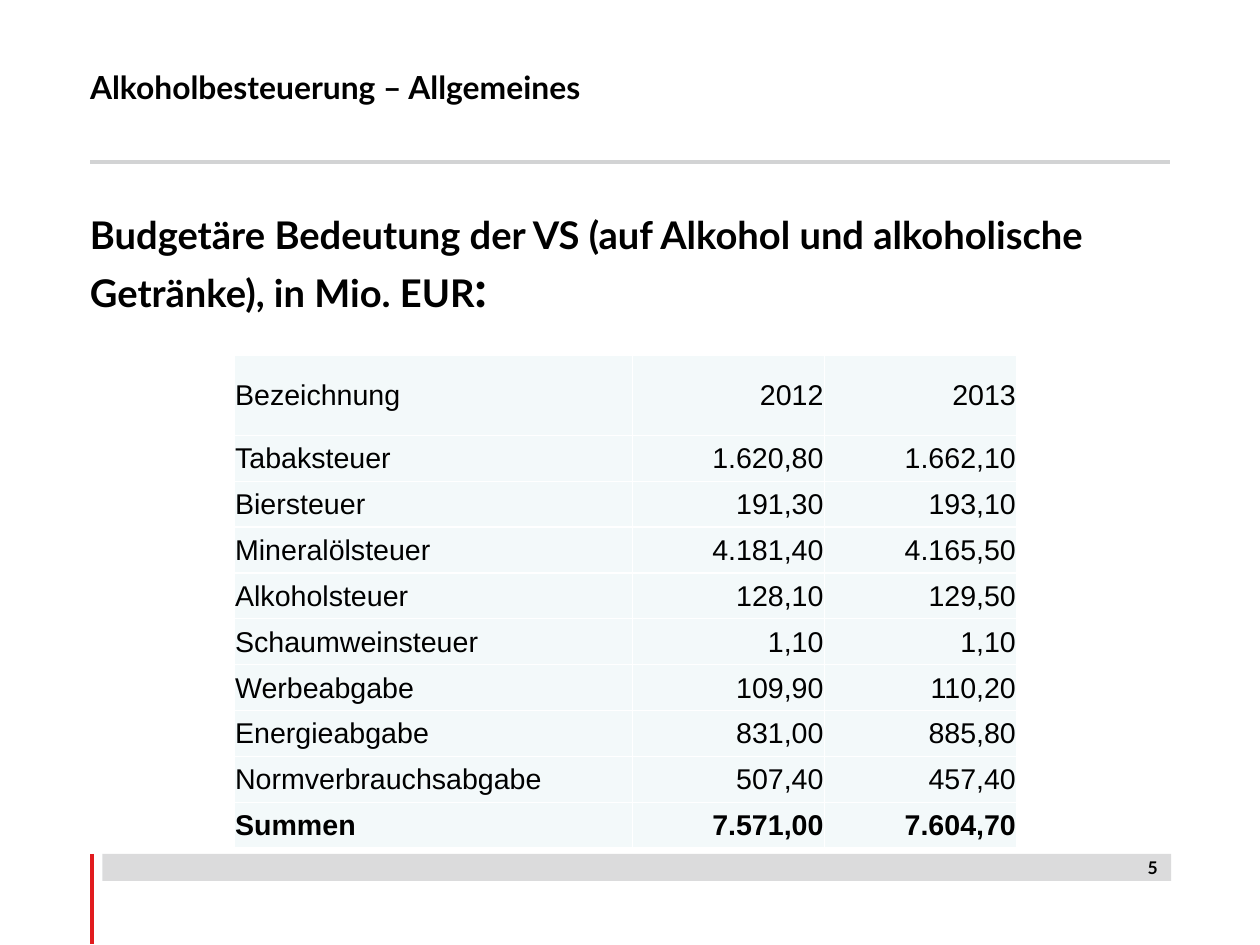
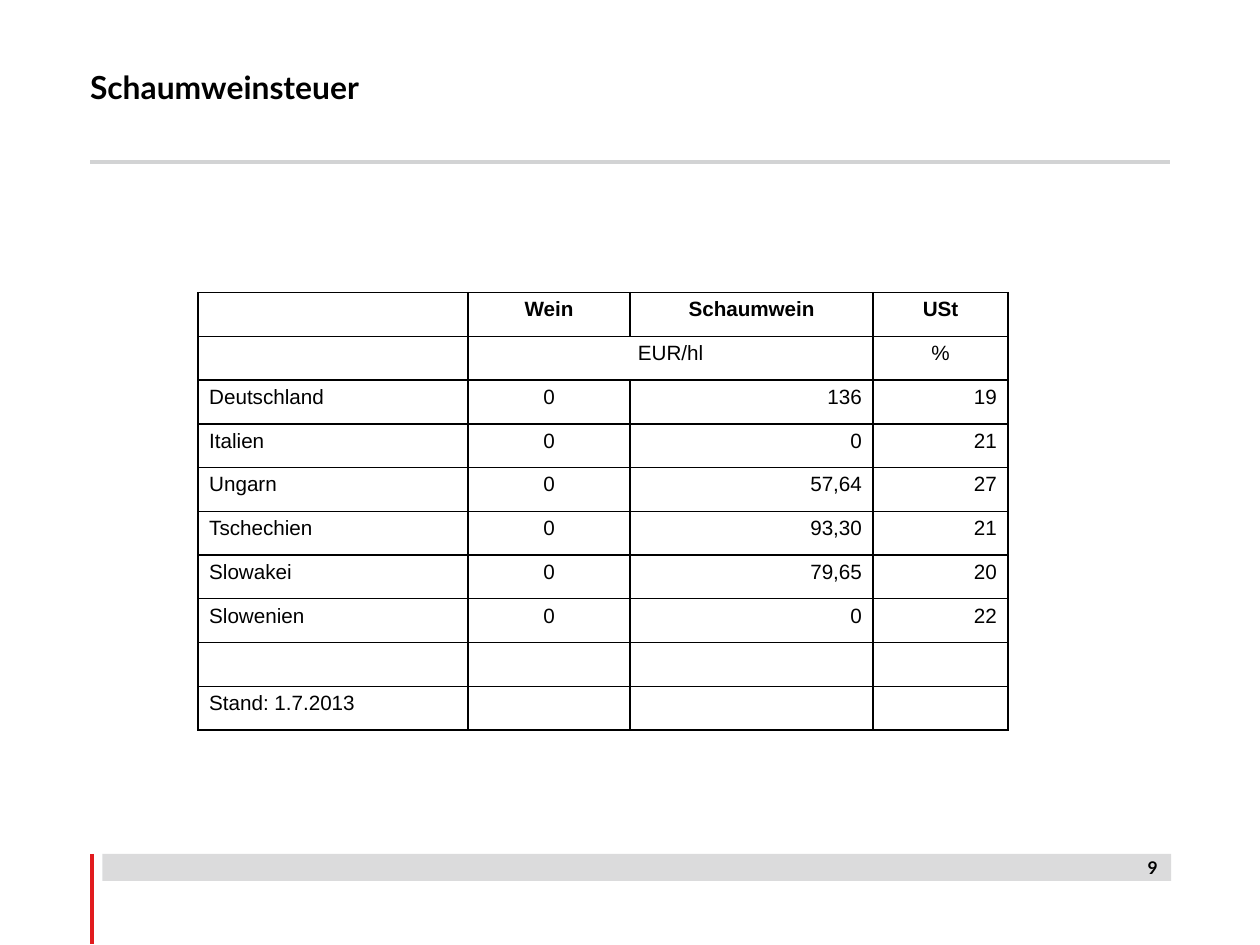
from dataclasses import dataclass

from lxml.etree import SubElement
from pptx import Presentation
from pptx.dml.color import RGBColor
from pptx.enum.shapes import MSO_CONNECTOR as Connector, MSO_SHAPE as Shape
from pptx.enum.text import MSO_ANCHOR as Anchor, MSO_AUTO_SIZE as AutoSize, PP_ALIGN as Align
from pptx.oxml import parse_xml
from pptx.oxml.ns import nsdecls, qn
from pptx.util import Pt

EMU_PER_PX = 9000
LEFT, CENTER, RIGHT = Align.LEFT, Align.CENTER, Align.RIGHT


@dataclass(frozen=True)
class Theme:
    ink: str = "000000"
    paper: str = "FFFFFF"
    grey: str = "D2D3D4"
    red: str = "E11B1E"
    pale: str = "F3F9FA"
    heading_font: str = "Lato"
    table_font: str = "Arial"
    title_size: int = 20
    lead_size: int = 24
    colon_size: int = 32
    number_size: int = 11
    rule_width: float = 2.84


@dataclass(frozen=True)
class TableStyle:
    size: int
    fill: str
    border: str
    anchor: Anchor
    margins: tuple
    aligns: tuple
    head_aligns: tuple
    head_rows: int
    bold_row: int


THEME = Theme()
BUDGET_STYLE = TableStyle(
    18, THEME.pale, THEME.paper, Anchor.MIDDLE, (1, 1, 1, 0),
    (LEFT, RIGHT, RIGHT), (LEFT, RIGHT, RIGHT), 1, 9)
RATES_STYLE = TableStyle(
    13, THEME.paper, THEME.ink, Anchor.TOP, (10, 5, 10, 5),
    (LEFT, CENTER, RIGHT, RIGHT), (LEFT, CENTER, CENTER, CENTER), 2, 0)

BUDGET_ROWS = [
    ("Bezeichnung", "2012", "2013"),
    ("Tabaksteuer", "1.620,80", "1.662,10"),
    ("Biersteuer", "191,30", "193,10"),
    ("Mineralölsteuer", "4.181,40", "4.165,50"),
    ("Alkoholsteuer", "128,10", "129,50"),
    ("Schaumweinsteuer", "1,10", "1,10"),
    ("Werbeabgabe", "109,90", "110,20"),
    ("Energieabgabe", "831,00", "885,80"),
    ("Normverbrauchsabgabe", "507,40", "457,40"),
    ("Summen", "7.571,00", "7.604,70"),
]
RATES_ROWS = [
    ("", "Wein", "Schaumwein", "USt"),
    ("", "EUR/hl", "", "%"),
    ("Deutschland", "0", "136", "19"),
    ("Italien", "0", "0", "21"),
    ("Ungarn", "0", "57,64", "27"),
    ("Tschechien", "0", "93,30", "21"),
    ("Slowakei", "0", "79,65", "20"),
    ("Slowenien", "0", "0", "22"),
    ("", "", "", ""),
    ("Stand: 1.7.2013", "", "", ""),
]


def px(*lengths):
    return [length * EMU_PER_PX for length in lengths]


def color(value):
    return RGBColor.from_string(value)


def style_paragraph(para, size, font, bold=True, align=LEFT):
    para.alignment = align
    para.font.size = Pt(size)
    para.font.name = font
    para.font.bold = bold
    para.font.color.rgb = color(THEME.ink)


def set_margins(target, margins):
    (target.margin_left, target.margin_top,
     target.margin_right, target.margin_bottom) = px(*margins)


def add_rule(page, start, end, tint):
    rule = page.shapes.add_connector(Connector.STRAIGHT, *px(*start, *end))
    rule.line.color.rgb = color(tint)
    rule.line.width = Pt(THEME.rule_width)
    SubElement(rule._element.spPr, qn("a:effectLst"))


def add_footer_bar(page):
    bar = page.shapes.add_shape(Shape.RECTANGLE, *px(91, 759, 950, 24))
    bar.shadow.inherit = False
    bar.line.fill.background()
    bar.fill.solid()
    bar.fill.fore_color.rgb = color(THEME.grey)
    tint = bar._element.spPr.find(qn("a:solidFill"))[0]
    SubElement(tint, qn("a:alpha"), val="80000")


def add_text(page, bounds, text, size, align=LEFT):
    box = page.shapes.add_textbox(*px(*bounds))
    frame = box.text_frame
    frame.word_wrap = True
    para = frame.paragraphs[0]
    para.text = text
    style_paragraph(para, size, THEME.heading_font, align=align)
    return frame


def set_title(page, text):
    title = page.shapes.title
    title.left, title.top, title.width, title.height = px(80, 44, 740, 66)
    frame = title.text_frame
    frame.text = text
    frame.auto_size = AutoSize.NONE
    frame.vertical_anchor = Anchor.MIDDLE
    set_margins(frame, (0, 0, 0, 0))
    style_paragraph(frame.paragraphs[0], THEME.title_size, THEME.heading_font)


def add_page(deck, title, number):
    page = deck.slides.add_slide(deck.slide_layouts[5])
    add_rule(page, (80, 144), (1040, 144), THEME.grey)
    add_rule(page, (82, 759), (82, 839), THEME.red)
    add_footer_bar(page)
    set_title(page, title)
    add_text(page, (968, 757, 71, 39), number, THEME.number_size, RIGHT)
    return page


def add_lead(page, text, ending):
    frame = add_text(page, (80, 188, 960, 568), text, THEME.lead_size)
    set_margins(frame, (0, 0, 0, 0))
    span = frame.paragraphs[0].add_run()
    span.text = ending
    span.font.size = Pt(THEME.colon_size)


def add_borders(cell, tint):
    properties = cell._tc.get_or_add_tcPr()
    for index, side in enumerate("LRTB"):
        properties.insert(index, parse_xml(
            f'<a:ln{side} {nsdecls("a")} w="12700"><a:solidFill>'
            f'<a:srgbClr val="{tint}"/></a:solidFill></a:ln{side}>'))


def fill_cell(cell, text, style, bold, align):
    cell.fill.solid()
    cell.fill.fore_color.rgb = color(style.fill)
    cell.vertical_anchor = style.anchor
    set_margins(cell, style.margins)
    add_borders(cell, style.border)
    para = cell.text_frame.paragraphs[0]
    if text:
        para.text = text
    else:
        SubElement(para._p, qn("a:endParaRPr"), sz=str(style.size * 100))
    style_paragraph(para, style.size, THEME.table_font, bold, align)


def add_grid(page, corner, widths, head_height, body_height, rows, style):
    bounds = px(*corner, sum(widths), head_height + body_height)
    table = page.shapes.add_table(len(rows), len(widths), *bounds).table
    table.first_row = table.horz_banding = False
    for column, width in zip(table.columns, px(*widths)):
        column.width = width
    head, body = px(head_height, body_height)
    for index, texts in enumerate(rows):
        table.rows[index].height = body // (len(rows) - 1) if index else head
        aligns = style.head_aligns if index < style.head_rows else style.aligns
        for position, (text, align) in enumerate(zip(texts, aligns)):
            fill_cell(table.cell(index, position), text, style,
                      index == style.bold_row, align)
    return table


def main():
    deck = Presentation()
    deck.slide_width, deck.slide_height = px(1120, 840)

    page = add_page(deck, "Alkoholbesteuerung – Allgemeines", "5")
    add_lead(page, "Budgetäre Bedeutung der VS (auf Alkohol und alkoholische "
                   "Getränke), in Mio. EUR", ":")
    add_grid(page, (208, 316), (354, 171, 171), 71, 367, BUDGET_ROWS, BUDGET_STYLE)

    page = add_page(deck, "Schaumweinsteuer", "9")
    rates = add_grid(page, (176, 260), (240, 144, 216, 120), 39, 350,
                     RATES_ROWS, RATES_STYLE)
    rates.cell(1, 1).merge(rates.cell(1, 2))

    deck.save("out.pptx")


if __name__ == "__main__":
    main()
